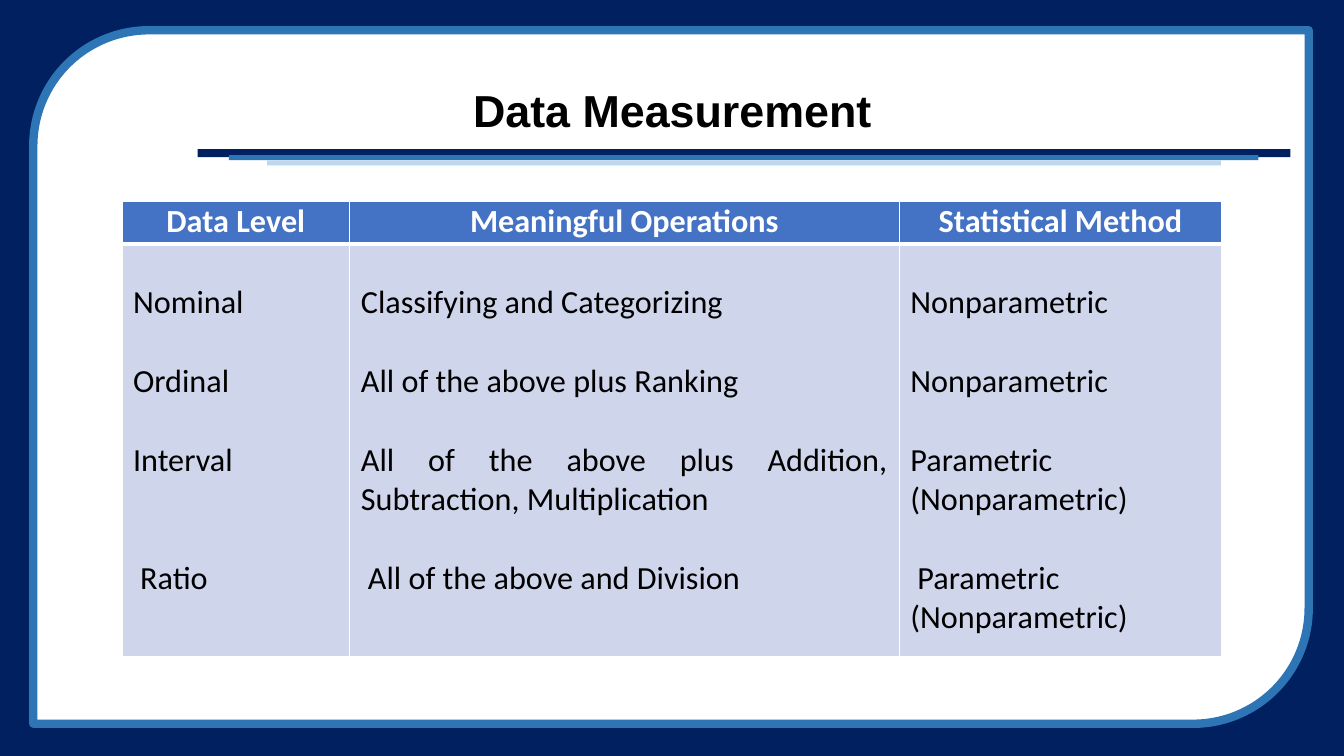
import pptx
import pptx.util
import pptx.dml.color
import pptx.enum.shapes
import pptx.enum.text
import pptx.oxml

Inches = pptx.util.Inches
Pt = pptx.util.Pt
MSO_SHAPE = pptx.enum.shapes.MSO_SHAPE
PP_ALIGN = pptx.enum.text.PP_ALIGN
NAMESPACE = "http://schemas.openxmlformats.org/drawingml/2006/main"
LINE_HEIGHT = 28


def color(hex_string):
    return pptx.dml.color.RGBColor.from_string(hex_string)


def format_paragraph(paragraph, name, size, hex_string, bold, alignment):
    paragraph.alignment = alignment
    for run in paragraph.runs:
        run.font.name = name
        run.font.size = Pt(size)
        run.font.bold = bold
        run.font.color.rgb = color(hex_string)


presentation = pptx.Presentation()
presentation.slide_width = Inches(13.33)
presentation.slide_height = Inches(7.5)
slide = presentation.slides.add_slide(presentation.slide_layouts[5])
title = slide.shapes.title

frame_shapes = [
    (MSO_SHAPE.RECTANGLE, 0, 0, 13.33, 7.5, "002060"),
    (MSO_SHAPE.ROUND_2_DIAG_RECTANGLE, 0.33, 0.3, 12.65, 6.88, "FFFFFF"),
    (MSO_SHAPE.RECTANGLE, 1.96, 1.48, 10.84, 0.08, "002060"),
    (MSO_SHAPE.RECTANGLE, 2.27, 1.54, 10.21, 0.05, "2E75B6"),
    (MSO_SHAPE.RECTANGLE, 2.65, 1.59, 9.46, 0.05, "BDD7EE"),
]
for kind, left, top, width, height, fill in frame_shapes:
    shape = slide.shapes.add_shape(
        kind, Inches(left), Inches(top), Inches(width), Inches(height))
    shape.shadow.inherit = False
    shape.fill.solid()
    shape.fill.fore_color.rgb = color(fill)
    if kind == MSO_SHAPE.ROUND_2_DIAG_RECTANGLE:
        shape.rotation = 180
        shape.line.color.rgb = color("2E75B6")
        shape.line.width = Pt(6)
    else:
        shape.line.fill.background()

slide.shapes._spTree.append(title._element)
title.left, title.top = Inches(0.92), Inches(0.4)
title.width, title.height = Inches(11.5), Inches(1.45)
title.text_frame.text = "Data Measurement"
title.text_frame.vertical_anchor = pptx.enum.text.MSO_ANCHOR.MIDDLE
title.text_frame.paragraphs[0].line_spacing = 0.9
format_paragraph(title.text_frame.paragraphs[0], "Arial", 32, "000000", True, PP_ALIGN.CENTER)

columns = [
    ("Data Level", 2.26,
     [("Nominal", 0), ("Ordinal", 1), ("Interval", 1), ("Ratio", 2)]),
    ("Meaningful Operations", 5.45,
     [("Classifying and Categorizing", 0), ("All of the above plus Ranking", 1),
      ("All of the above plus Addition, Subtraction, Multiplication", 1),
      ("All of the above and Division", 1)]),
    ("Statistical Method", 3.2,
     [("Nonparametric", 0), ("Nonparametric", 1), ("Parametric", 1),
      ("(Nonparametric)", 0), ("Parametric", 1), ("(Nonparametric)", 0)]),
]
ratio_entries = [3, 3, 4]

table = slide.shapes.add_table(
    2, 3, Inches(1.21), Inches(2), Inches(10.91), Inches(4.51)).table
table.rows[0].height = Inches(0.42)
table.rows[1].height = Inches(4.09)

for column_index, (heading, width, entries) in enumerate(columns):
    table.columns[column_index].width = Inches(width)
    header = table.cell(0, column_index)
    body = table.cell(1, column_index)

    for cell, fill, bottom_width, top_width in [
            (header, "4472C4", 3, 1), (body, "CFD5EA", 1, 3)]:
        cell.margin_left = cell.margin_right = Inches(0.11)
        cell.margin_top = cell.margin_bottom = 0
        properties = cell._tc.get_or_add_tcPr()
        for side, points in [("L", 1), ("R", 1), ("T", top_width), ("B", bottom_width)]:
            properties.append(pptx.oxml.parse_xml(
                f'<a:ln{side} xmlns:a="{NAMESPACE}" w="{Pt(points)}">'
                f'<a:solidFill><a:srgbClr val="FFFFFF"/></a:solidFill></a:ln{side}>'))
        cell.fill.solid()
        cell.fill.fore_color.rgb = color(fill)

    header.text_frame.text = heading
    format_paragraph(
        header.text_frame.paragraphs[0], "Calibri", 23, "FFFFFF", True, PP_ALIGN.CENTER)

    body.margin_top = Pt(LINE_HEIGHT)
    body.text_frame.text = "\n".join(text for text, gap in entries)
    for entry_index, paragraph in enumerate(body.text_frame.paragraphs):
        format_paragraph(paragraph, "Calibri", 23, "000000", False, PP_ALIGN.JUSTIFY)
        paragraph.space_before = Pt(LINE_HEIGHT * entries[entry_index][1])
        if entry_index == ratio_entries[column_index]:
            paragraph._p.get_or_add_pPr().set("indent", str(Inches(0.07)))

presentation.save("out.pptx")
